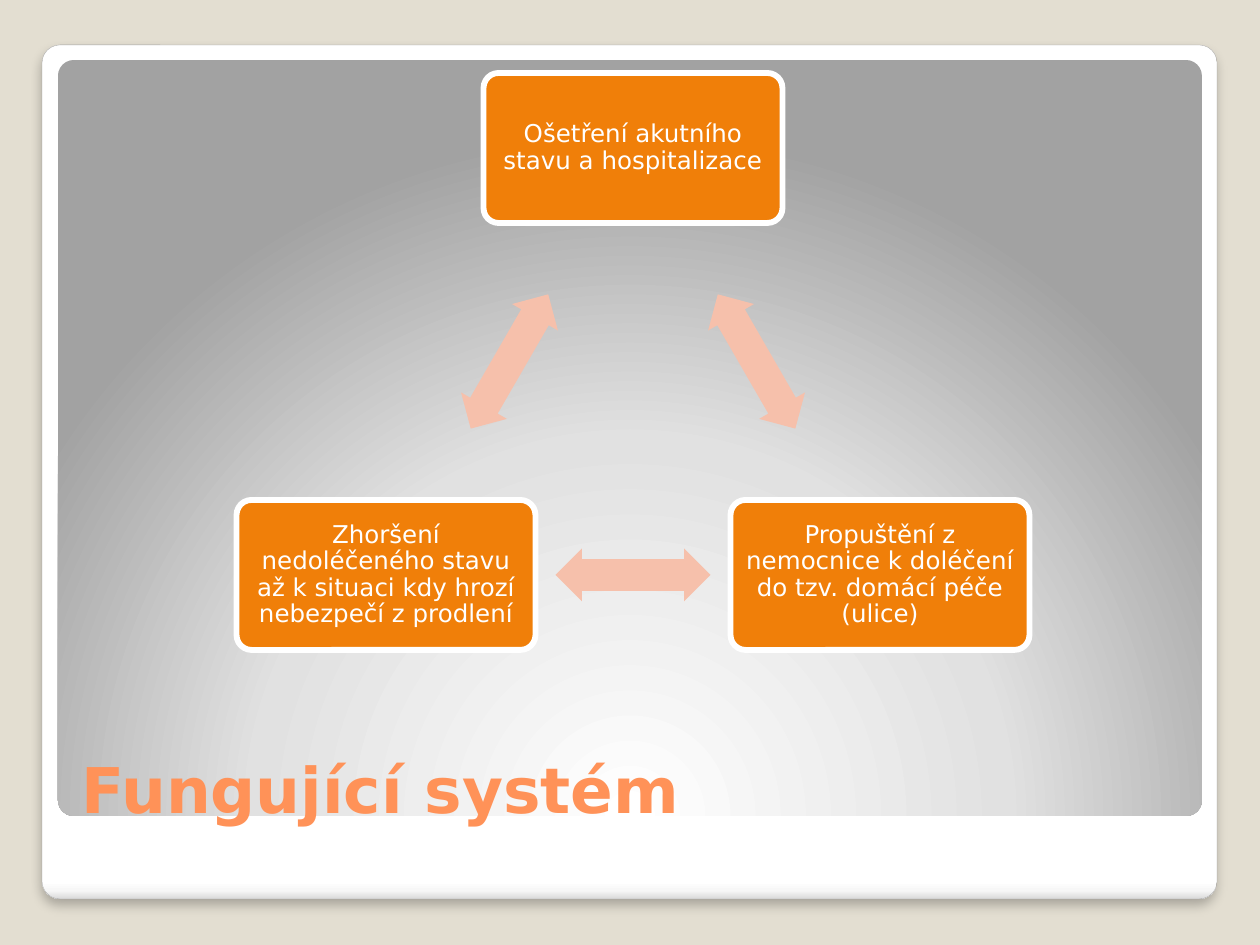
from lxml import etree
from pptx import Presentation
from pptx.dml.color import RGBColor
from pptx.enum.shapes import MSO_SHAPE
from pptx.enum.text import MSO_ANCHOR, PP_ALIGN
from pptx.oxml import parse_xml
from pptx.oxml.ns import nsdecls, qn
from pptx.util import Emu, Pt

ROUNDED = MSO_SHAPE.ROUNDED_RECTANGLE
DOUBLE_ARROW = MSO_SHAPE.LEFT_RIGHT_ARROW
MIDDLE, BOTTOM = MSO_ANCHOR.MIDDLE, MSO_ANCHOR.BOTTOM
CENTER, LEFT = PP_ALIGN.CENTER, PP_ALIGN.LEFT
FONT = "DejaVu Sans"
WHITE, BACKDROP, EDGE = "FFFFFF", "E3DED1", "A4A4A4"
ORANGE, PEACH, CORAL = "F07F09", "F6C0AB", "FF9258"
CARD_STOPS = [(0, WHITE), (98, WHITE), (99, "F7F7F7"), (100, "DADADA")]
PANEL_STOPS = [(0, WHITE), (55, "E1E1E1"), (100, "A2A2A2")]
DOWNWARD = '<a:lin ang="5400000" scaled="0"/>'
RADIAL = ('<a:path path="circle"><a:fillToRect l="50000" t="175000" '
          'r="50000" b="-75000"/></a:path>')


def px(length):
    return Emu(round(length * 914400 / 126))


def color(value):
    return RGBColor.from_string(value)


class Painter:
    """Draws styled elements on the current page."""

    def __init__(self, page):
        self.page = page
        page.background.fill.solid()
        page.background.fill.fore_color.rgb = color(BACKDROP)

    def shape(self, kind, bounds, adjustments, fill=None, line=None, width=0):
        shape = self.page.shapes.add_shape(kind, *map(px, bounds))
        shape.shadow.inherit = False
        for index, value in enumerate(adjustments):
            shape.adjustments[index] = value
        if fill:
            shape.fill.solid()
            shape.fill.fore_color.rgb = color(fill)
        else:
            shape.fill.background()
        if line:
            shape.line.color.rgb = color(line)
            shape.line.width = Pt(width)
        else:
            shape.line.fill.background()
        return shape

    def gradient(self, shape, stops, direction):
        stop_xml = "".join(
            f'<a:gs pos="{place * 1000}"><a:srgbClr val="{value}"/></a:gs>'
            for place, value in stops)
        properties = shape.element.spPr
        properties.replace(properties.find(qn("a:noFill")), parse_xml(
            f'<a:gradFill {nsdecls("a")} rotWithShape="1"><a:gsLst>{stop_xml}</a:gsLst>'
            f'{direction}</a:gradFill>'))

    def drop_shadow(self, shape):
        effects = shape.element.spPr.find(qn("a:effectLst"))
        shadow = etree.SubElement(
            effects, qn("a:outerShdw"), blurRad=str(Pt(6)), dist=str(Pt(4)),
            dir="5400000", algn="t", rotWithShape="0")
        tone = etree.SubElement(shadow, qn("a:srgbClr"), val="000000")
        etree.SubElement(tone, qn("a:alpha"), val="25000")

    def text(self, frame, words, size, tone, align, anchor, bold=False):
        frame.word_wrap = True
        frame.vertical_anchor = anchor
        para = frame.paragraphs[0]
        para.alignment = align
        span = para.add_run()
        span.text = words
        span.font.name = FONT
        span.font.size = Pt(size)
        span.font.bold = bold
        span.font.color.rgb = color(tone)
        return para

    def title(self, words, bounds):
        box = self.page.shapes.add_textbox(*map(px, bounds))
        self.text(box.text_frame, words, 36, CORAL, LEFT, BOTTOM, bold=True)

    def stage(self, words, center):
        x, y = center
        box = self.shape(ROUNDED, (x - 149.5, y - 75, 299, 150), [0.1],
                         ORANGE, WHITE, 3.35)
        frame = box.text_frame
        frame.margin_left = frame.margin_right = px(4)
        frame.margin_top = frame.margin_bottom = px(4)
        para = self.text(frame, words, 14, WHITE, CENTER, MIDDLE)
        para.line_spacing = 0.9

    def arrow(self, start, end, angle):
        x, y = ((a + b) / 2 for a, b in zip(start, end))
        arrow = self.shape(DOUBLE_ARROW, (x - 77.5, y - 26.5, 155, 53),
                           [0.6, 0.5], PEACH)
        arrow.rotation = angle


def main():
    deck = Presentation()
    deck.slide_width, deck.slide_height = px(1260), px(945)
    painter = Painter(deck.slides.add_slide(deck.slide_layouts[6]))

    card = painter.shape(ROUNDED, (42, 45, 1175, 854), [0.021], None, EDGE, 0.16)
    painter.gradient(card, CARD_STOPS, DOWNWARD)
    painter.drop_shadow(card)
    panel = painter.shape(ROUNDED, (58, 60, 1144, 756), [0.021])
    painter.gradient(panel, PANEL_STOPS, RADIAL)
    painter.title("Fungující systém", (69, 687, 1126, 145))

    stages = [
        ("Ošetření akutního stavu a hospitalizace", (633, 148)),
        ("Propuštění z nemocnice k doléčení do tzv. domácí péče (ulice)", (880, 575)),
        ("Zhoršení nedoléčeného stavu až k situaci kdy hrozí nebezpečí z prodlení",
         (386, 575)),
    ]
    for index, (words, center) in enumerate(stages):
        following = stages[(index + 1) % len(stages)][1]
        painter.stage(words, center)
        painter.arrow(center, following, 60 + 120 * index)

    deck.save("out.pptx")


if __name__ == "__main__":
    main()
